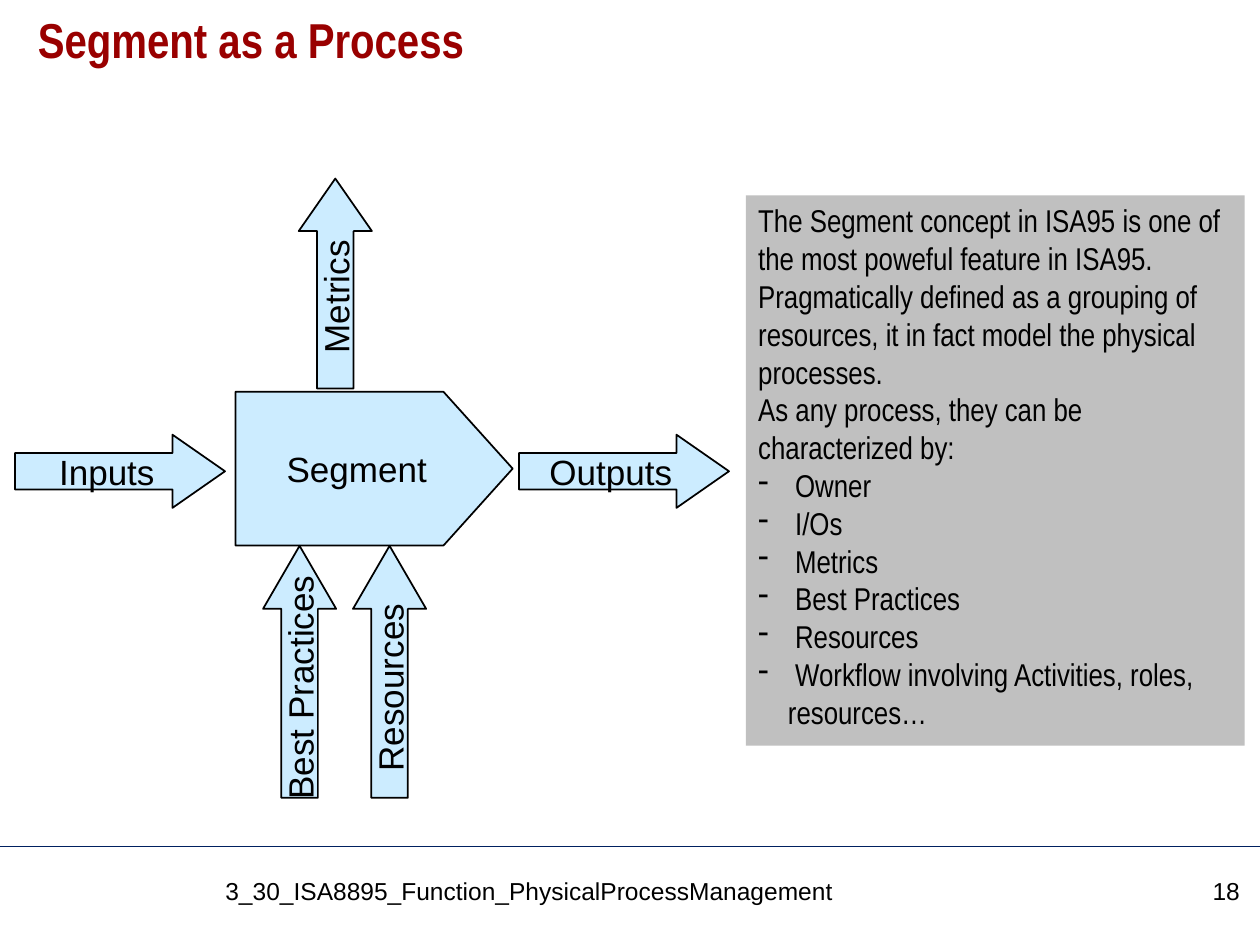
from dataclasses import dataclass

from lxml import etree
from pptx import Presentation
from pptx.dml.color import RGBColor
from pptx.enum.shapes import MSO_CONNECTOR, MSO_SHAPE
from pptx.enum.text import MSO_ANCHOR, PP_ALIGN
from pptx.oxml.ns import qn
from pptx.util import Pt

RECTANGLE = MSO_SHAPE.RECTANGLE
PENTAGON = MSO_SHAPE.PENTAGON
RIGHT_ARROW = MSO_SHAPE.RIGHT_ARROW
STRAIGHT = MSO_CONNECTOR.STRAIGHT
TOP, MIDDLE = MSO_ANCHOR.TOP, MSO_ANCHOR.MIDDLE
LEFT, CENTER, RIGHT = PP_ALIGN.LEFT, PP_ALIGN.CENTER, PP_ALIGN.RIGHT


@dataclass(frozen=True)
class Theme:
    title: RGBColor = RGBColor(0x99, 0x00, 0x00)
    text: RGBColor = RGBColor(0x00, 0x00, 0x00)
    flow: RGBColor = RGBColor(0xCC, 0xEC, 0xFF)
    panel: RGBColor = RGBColor(0xC0, 0xC0, 0xC0)
    rule: RGBColor = RGBColor(0x00, 0x20, 0x60)
    font: str = "Arial"
    narrow: str = "Arial Narrow"
    title_size: int = 28
    label_size: int = 20
    body_size: int = 18
    footer_size: int = 14


THEME = Theme()
BULLET_INDENT = 17
ARROW_HEIGHT = 41.8
ARROW_HEAD = 30  # length of every horizontal and metrics arrowhead
INPUT_HEAD = 36  # length of the heads that enter from below

# Label, left, top, length, head length, rotation
ARROWS = [
    ("Inputs", 8.6, 248.4, 120, ARROW_HEAD, 0),
    ("Outputs", 296.6, 248.4, 120, ARROW_HEAD, 0),
    ("Best Practices", 99.2, 363, 144, INPUT_HEAD, 270),
    ("Metrics", 131.6, 141.1, 120, ARROW_HEAD, 270),
    ("Resources", 150.6, 363, 144, INPUT_HEAD, 270),
]

INTRODUCTION = [
    "The Segment concept in ISA95 is one of the most poweful feature in ISA95.",
    "Pragmatically defined as a grouping of resources, it in fact model the physical processes.",
    "As any process, they can be characterized by:",
]
CHARACTERISTICS = [
    " Owner",
    " I/Os",
    " Metrics",
    " Best Practices",
    " Resources",
    " Workflow involving Activities, roles, resources…",
]


def write(paragraph, text, size, font=THEME.font, color=THEME.text, bold=False, align=LEFT):
    paragraph.alignment = align
    run = paragraph.add_run()
    run.text = text
    run.font.name = font
    run.font.size = Pt(size)
    run.font.bold = bold
    run.font.color.rgb = color


def add_dash(paragraph):
    properties = paragraph._p.get_or_add_pPr()
    properties.set("marL", str(Pt(BULLET_INDENT)))
    properties.set("indent", str(-Pt(BULLET_INDENT)))
    etree.SubElement(properties, qn("a:buChar")).set("char", "-")


def add_title(slide, text):
    title = slide.shapes.title
    title.left, title.top, title.width, title.height = Pt(14.4), Pt(5.8), Pt(692), Pt(59.8)
    frame = title.text_frame
    frame.vertical_anchor = TOP
    frame.paragraphs[0].line_spacing = 0.9
    write(frame.paragraphs[0], text, THEME.title_size, THEME.narrow, THEME.title, bold=True)


def add_flow_shape(slide, kind, label, left, top, width, height, adjustments, rotation=0):
    shape = slide.shapes.add_shape(kind, Pt(left), Pt(top), Pt(width), Pt(height))
    shape.shadow.inherit = False
    for index, value in enumerate(adjustments):
        shape.adjustments[index] = value
    shape.rotation = rotation
    shape.fill.solid()
    shape.fill.fore_color.rgb = THEME.flow
    shape.line.color.rgb = THEME.text
    shape.line.width = Pt(1)
    frame = shape.text_frame
    frame.word_wrap = False
    frame.vertical_anchor = MIDDLE
    write(frame.paragraphs[0], label, THEME.label_size, align=CENTER)


def add_panel(slide):
    panel = slide.shapes.add_shape(RECTANGLE, Pt(426.2), Pt(111.6), Pt(285.1), Pt(314.6))
    panel.shadow.inherit = False
    panel.fill.solid()
    panel.fill.fore_color.rgb = THEME.panel
    panel.line.fill.background()
    frame = panel.text_frame
    frame.word_wrap = True
    frame.vertical_anchor = TOP
    for index, text in enumerate(INTRODUCTION + CHARACTERISTICS):
        paragraph = frame.add_paragraph() if index else frame.paragraphs[0]
        if text in CHARACTERISTICS:
            add_dash(paragraph)
        write(paragraph, text, THEME.body_size, THEME.narrow)


def add_footer_text(slide, text, left, width, align):
    box = slide.shapes.add_textbox(Pt(left), Pt(496.8), Pt(width), Pt(32.4))
    box.text_frame.word_wrap = True
    write(box.text_frame.paragraphs[0], text, THEME.footer_size, align=align)


def add_rule(slide, top, width):
    rule = slide.shapes.add_connector(STRAIGHT, Pt(0), Pt(top), Pt(width), Pt(top))
    rule.line.color.rgb = THEME.rule
    rule.line.width = Pt(0.75)
    etree.SubElement(rule._element.spPr, qn("a:effectLst"))


def main():
    presentation = Presentation()
    presentation.slide_width, presentation.slide_height = Pt(720), Pt(540)
    slide = presentation.slides.add_slide(presentation.slide_layouts[5])

    # Title and footer
    add_rule(slide, 483.8, 720)
    add_title(slide, "Segment as a Process")
    add_footer_text(slide, "3_30_ISA8895_Function_PhysicalProcessManagement", 121.7, 519, LEFT)
    add_footer_text(slide, "18", 649.4, 66.2, RIGHT)

    # Process with the flows around it
    add_flow_shape(slide, PENTAGON, "Segment", 134.6, 223.9, 158.4, 87.8, [0.45])
    for label, left, top, length, head, rotation in ARROWS:
        add_flow_shape(slide, RIGHT_ARROW, label, left, top, length, ARROW_HEIGHT,
                       [0.5, head / ARROW_HEIGHT], rotation)

    # Explanation
    add_panel(slide)

    presentation.save("out.pptx")


if __name__ == "__main__":
    main()
